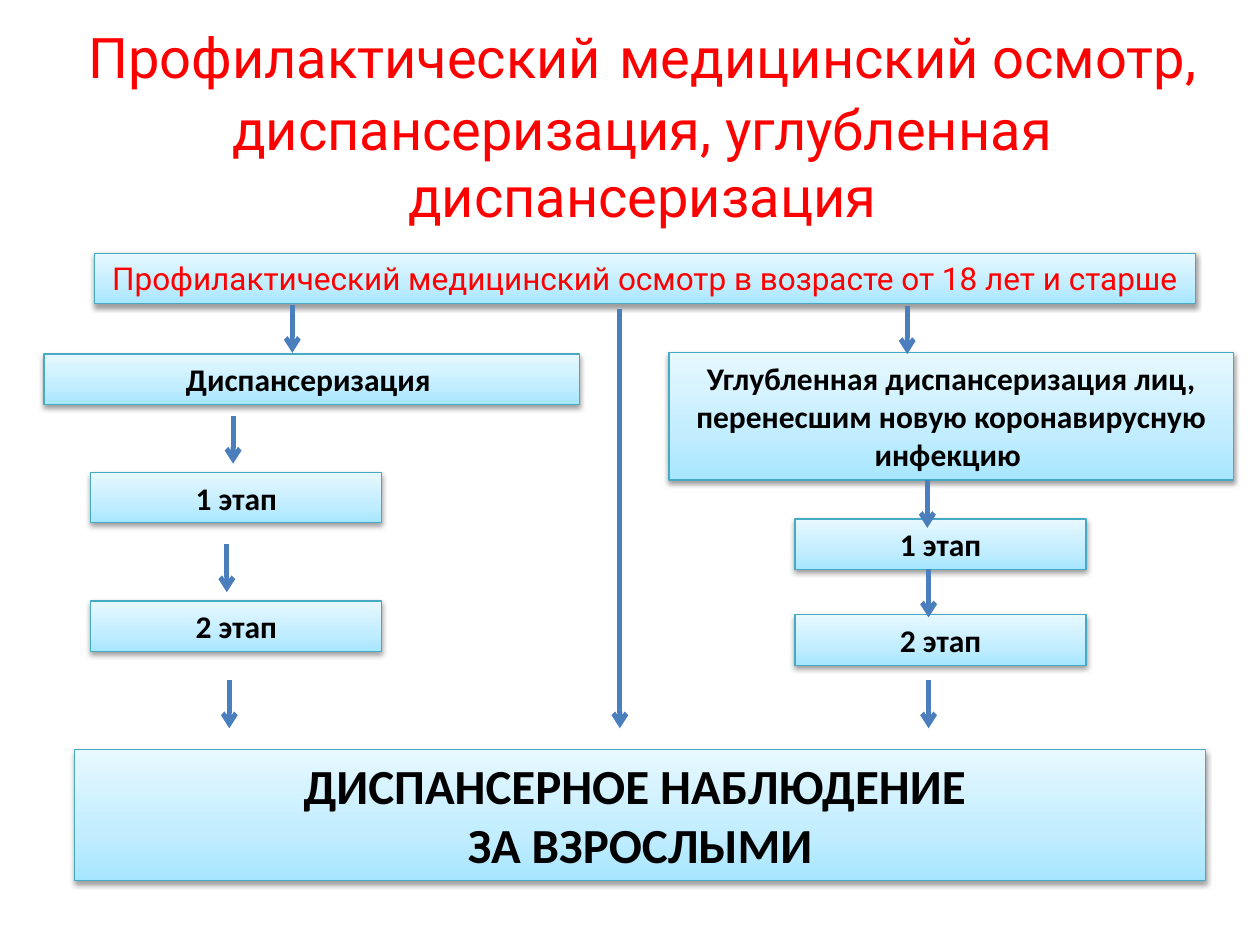
from dataclasses import dataclass

import lxml.etree
import pptx
import pptx.dml.color
import pptx.enum.dml
import pptx.enum.shapes
import pptx.enum.text
import pptx.oxml
import pptx.oxml.ns
import pptx.util

EMU_PER_PX = 9144  # 100 px to the inch


@dataclass(frozen=True)
class Theme:
    red: str = "FF0000"
    black: str = "000000"
    outline: str = "46AAC5"
    arrow: str = "4B7EBC"
    gradient: tuple = ((0, "A7E6FF"), (35, "C1EDFF"), (100, "E7F8FF"))
    heading_font: str = "Roboto"
    body_font: str = "Calibri"
    title_size: int = 32
    gap_size: int = 44
    body_size: int = 18
    result_size: int = 28
    outline_width: float = 0.75
    arrow_width: float = 2.75


THEME = Theme()


@dataclass(frozen=True)
class Box:
    text: str
    left: int
    top: int
    width: int
    height: int = 40
    size: int = THEME.body_size
    font: str = THEME.body_font
    color: str = THEME.black
    bold: bool = True


@dataclass(frozen=True)
class Arrow:
    x: int
    top: int
    length: int = 38


STAGE_WIDTH = 231
BOXES = [
    Box("Профилактический медицинский осмотр в возрасте от 18 лет и старше",
        75, 201, 874, font=THEME.heading_font, color=THEME.red, bold=False),
    Box("Диспансеризация ", 35, 281, 425),
    Box("1 этап", 72, 375, STAGE_WIDTH),
    Box("2 этап", 72, 477, STAGE_WIDTH),
    Box("ДИСПАНСЕРНОЕ НАБЛЮДЕНИЕ \nЗА ВЗРОСЛЫМИ", 59, 595, 898, 104, size=THEME.result_size),
    Box("Углубленная диспансеризация лиц, перенесшим новую коронавирусную инфекцию ",
        531, 280, 448, 101),
    Box("1 этап", 631, 412, STAGE_WIDTH),
    Box("2 этап", 631, 488, STAGE_WIDTH),
]
ARROWS = [
    # Left branch
    Arrow(232, 242), Arrow(185, 330), Arrow(180, 432), Arrow(182, 540),
    # Right branch
    Arrow(720, 243), Arrow(736, 381), Arrow(737, 452), Arrow(737, 540),
    # Straight to observation
    Arrow(492, 245, 333),
]


def px(length: int) -> int:
    return length * EMU_PER_PX


def rgb(color: str) -> pptx.dml.color.RGBColor:
    return pptx.dml.color.RGBColor.from_string(color)


def set_font(font, name: str, size: int, color: str, bold: bool) -> None:
    font.name = name
    font.size = pptx.util.Pt(size)
    font.bold = bold
    font.color.rgb = rgb(color)


def xml(text: str):
    return pptx.oxml.parse_xml(text.replace(">", f" {pptx.oxml.ns.nsdecls('a')}>", 1))


def add_title(slide) -> None:
    text_box = slide.shapes.add_textbox(px(22), px(29), px(976), px(125))
    frame = text_box.text_frame
    frame.word_wrap = True
    frame.vertical_anchor = pptx.enum.text.MSO_ANCHOR.MIDDLE
    paragraph = frame.paragraphs[0]
    paragraph.alignment = pptx.enum.text.PP_ALIGN.CENTER
    heading = (THEME.heading_font, THEME.title_size, THEME.red, False)
    gap = (THEME.body_font, THEME.gap_size, THEME.black, True)
    for text, style in (
        ("Профилактический", heading),
        (" ", gap),
        ("медицинский осмотр, диспансеризация, углубленная", heading),
        ("\n", heading),
        ("диспансеризация", heading),
    ):
        if text == "\n":
            paragraph.add_line_break()
            continue
        run = paragraph.add_run()
        run.text = text
        set_font(run.font, *style)


def add_box(slide, box: Box) -> None:
    shape = slide.shapes.add_shape(
        pptx.enum.shapes.MSO_SHAPE.RECTANGLE,
        px(box.left), px(box.top), px(box.width), px(box.height))
    shape.line.color.rgb = rgb(THEME.outline)
    shape.line.width = pptx.util.Pt(THEME.outline_width)

    # Gradient rising from the bottom edge, and a soft shadow below
    stops = "".join(f'<a:gs pos="{position * 1000}"><a:srgbClr val="{color}"/></a:gs>'
                    for position, color in THEME.gradient)
    properties = shape.element.spPr
    outline = properties.find(pptx.oxml.ns.qn("a:ln"))
    outline.addprevious(xml(f'<a:gradFill rotWithShape="1"><a:gsLst>{stops}</a:gsLst>'
                            '<a:lin ang="16200000" scaled="0"/></a:gradFill>'))
    outline.addnext(xml('<a:effectLst><a:outerShdw blurRad="40000" dist="20000" dir="5400000" '
                        f'rotWithShape="0"><a:srgbClr val="{THEME.black}"><a:alpha val="38000"/>'
                        '</a:srgbClr></a:outerShdw></a:effectLst>'))

    frame = shape.text_frame
    frame.word_wrap = True
    frame.vertical_anchor = pptx.enum.text.MSO_ANCHOR.TOP
    frame.text = box.text
    for paragraph in frame.paragraphs:
        paragraph.alignment = pptx.enum.text.PP_ALIGN.CENTER
        set_font(paragraph.font, box.font, box.size, box.color, box.bold)


def add_arrow(slide, arrow: Arrow) -> None:
    connector = slide.shapes.add_connector(
        pptx.enum.shapes.MSO_CONNECTOR.STRAIGHT,
        px(arrow.x), px(arrow.top), px(arrow.x), px(arrow.top + arrow.length))
    connector.line.color.rgb = rgb(THEME.arrow)
    connector.line.width = pptx.util.Pt(THEME.arrow_width)
    properties = connector.element.spPr
    outline = properties.find(pptx.oxml.ns.qn("a:ln"))
    lxml.etree.SubElement(outline, pptx.oxml.ns.qn("a:tailEnd"), type="arrow")
    lxml.etree.SubElement(properties, pptx.oxml.ns.qn("a:effectLst"))


def main() -> None:
    presentation = pptx.Presentation()
    presentation.slide_width = px(1000)
    presentation.slide_height = px(750)
    slide = presentation.slides.add_slide(presentation.slide_layouts[6])

    add_title(slide)
    for box in BOXES:
        add_box(slide, box)
    for arrow in ARROWS:
        add_arrow(slide, arrow)

    presentation.save("out.pptx")


if __name__ == "__main__":
    main()
